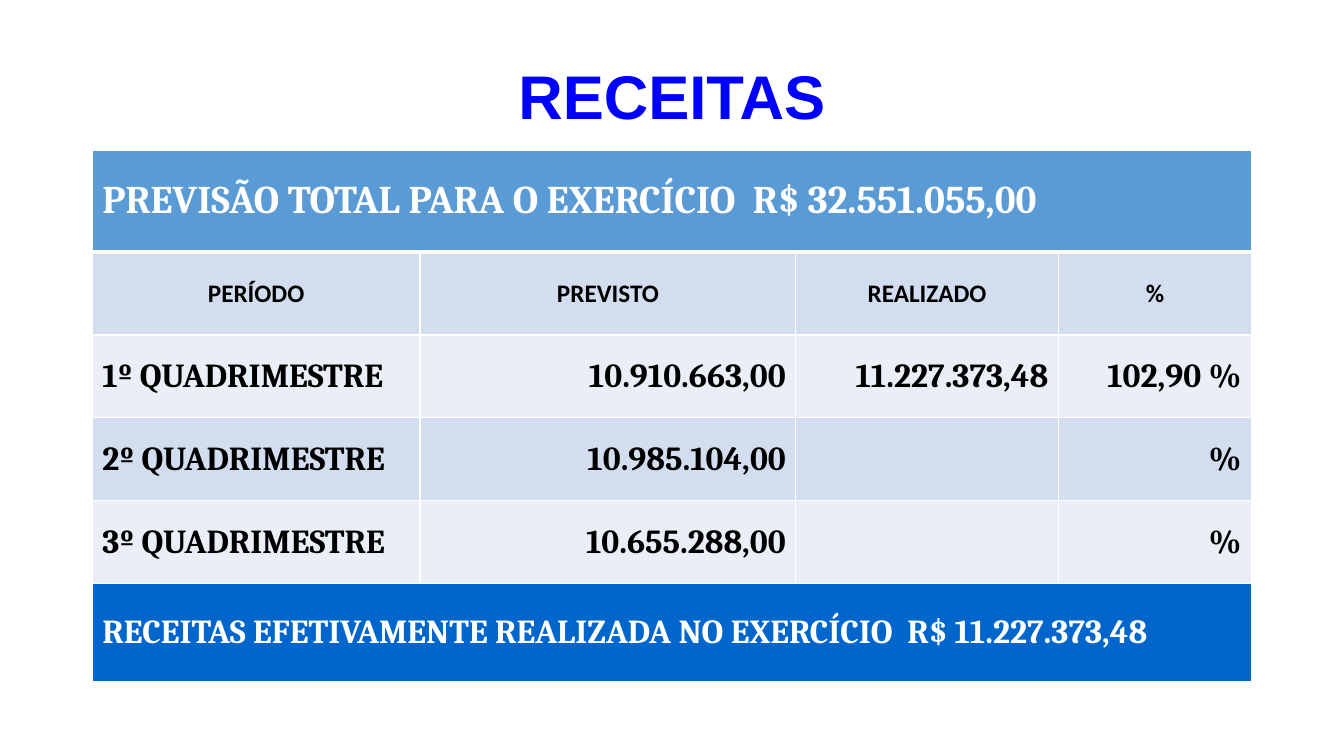
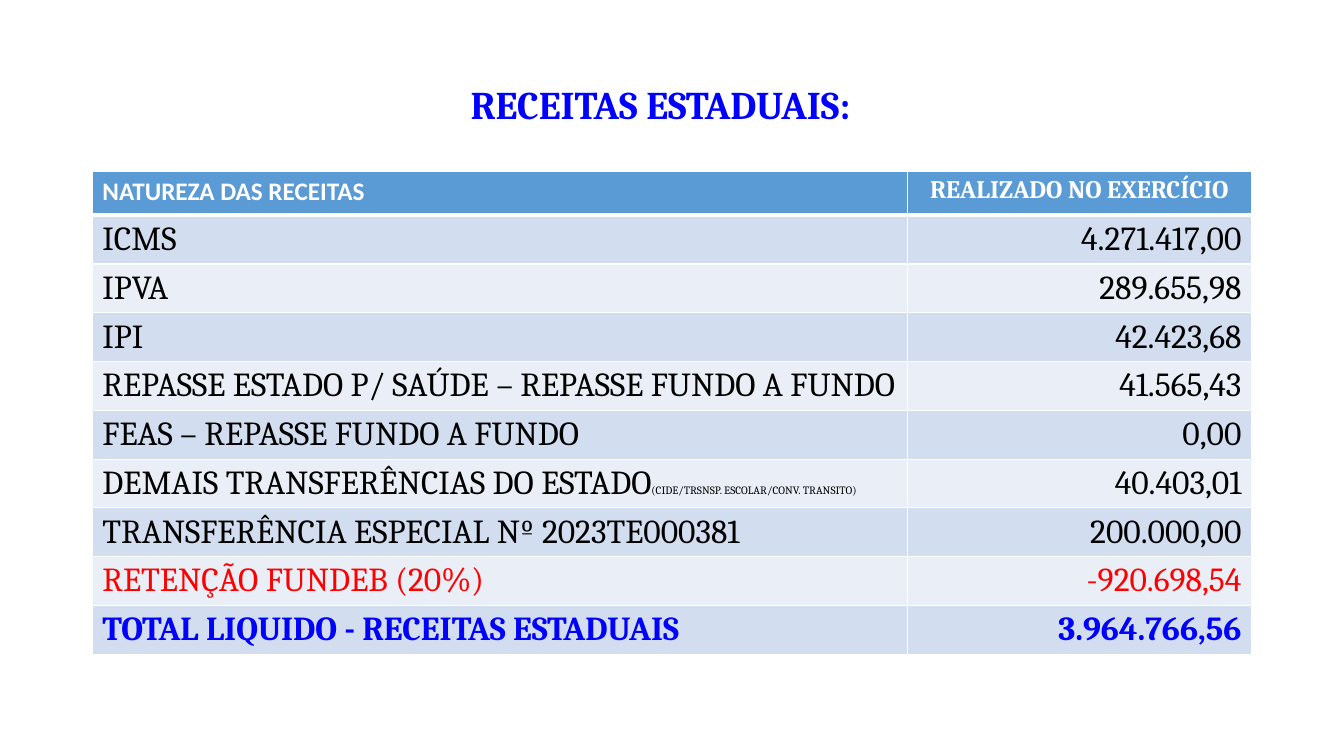
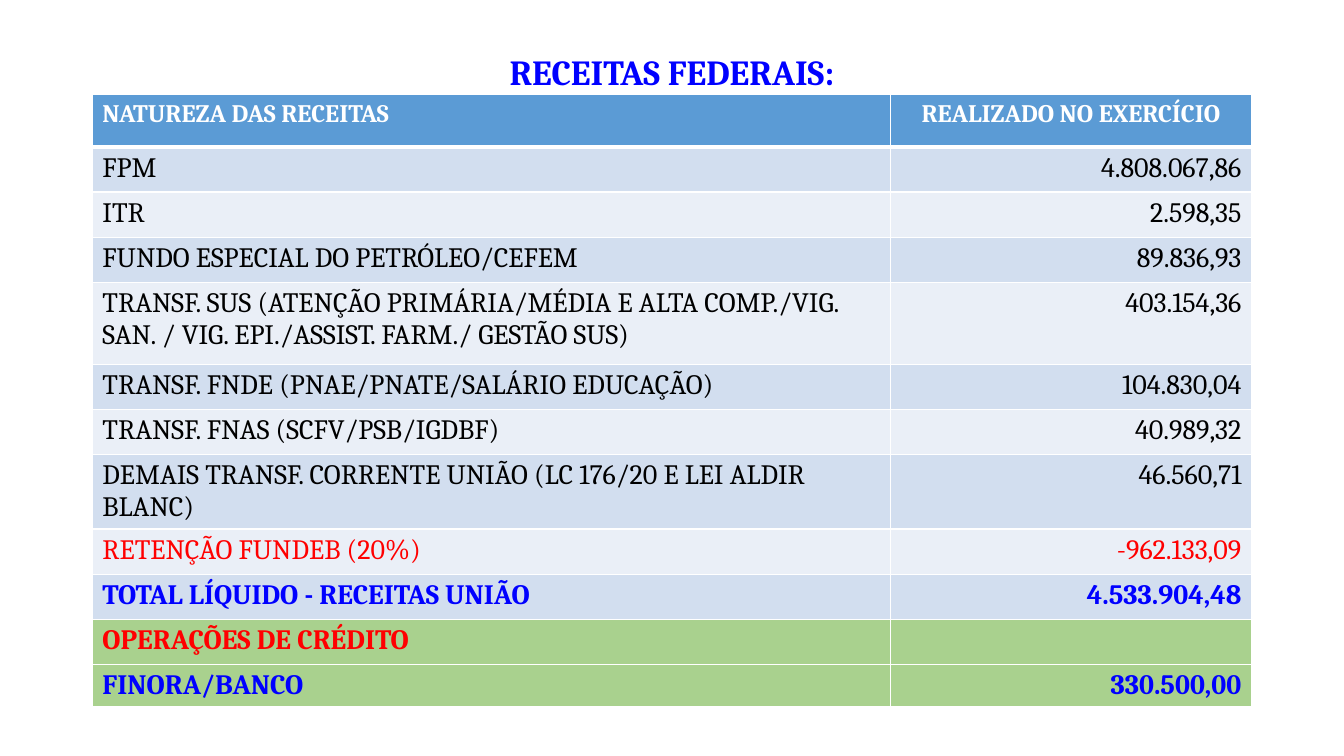
import dataclasses
import lxml.etree
import pptx
import pptx.dml.color
import pptx.enum.text
import pptx.oxml.ns
import pptx.util

RGBColor = pptx.dml.color.RGBColor
PP_ALIGN = pptx.enum.text.PP_ALIGN
MSO_ANCHOR = pptx.enum.text.MSO_ANCHOR

WHITE = RGBColor(0xFF, 0xFF, 0xFF)
BLACK = RGBColor(0x00, 0x00, 0x00)
BLUE = RGBColor(0x00, 0x00, 0xFF)
RED = RGBColor(0xFF, 0x00, 0x00)
HEADER_BLUE = RGBColor(0x5B, 0x9B, 0xD5)
TOTAL_BLUE = RGBColor(0x00, 0x66, 0xCC)
BAND_DARK = RGBColor(0xD2, 0xDE, 0xEF)
BAND_LIGHT = RGBColor(0xEA, 0xEF, 0xF7)
CREDIT_GREEN = RGBColor(0xA9, 0xD1, 0x8E)
BANDS = (BAND_DARK, BAND_LIGHT)

PX = 9525
LEFT, WIDTH = 88, 1104
LEFT_RIGHT = (PP_ALIGN.LEFT, PP_ALIGN.RIGHT)
LEFT_CENTER = (PP_ALIGN.LEFT, PP_ALIGN.CENTER)


@dataclasses.dataclass(frozen=True)
class Style:
    size: float
    color: RGBColor = BLACK
    bold: bool = False
    font: str = "Cambria"


@dataclasses.dataclass(frozen=True)
class Row:
    texts: tuple
    style: Style
    fill: RGBColor
    height: int
    aligns: tuple = LEFT_RIGHT


def format_run(run, style):
    run.font.size = pptx.util.Pt(style.size)
    run.font.color.rgb = style.color
    run.font.bold = style.bold
    run.font.name = style.font


def place_title(slide, text, style, box):
    title = slide.shapes.title
    title.left, title.top, title.width, title.height = (v * PX for v in box)
    frame = title.text_frame
    frame.text = text
    frame.auto_size = pptx.enum.text.MSO_AUTO_SIZE.NONE
    frame.vertical_anchor = MSO_ANCHOR.MIDDLE
    paragraph = frame.paragraphs[0]
    paragraph.alignment = PP_ALIGN.CENTER
    paragraph.line_spacing = 0.9
    format_run(paragraph.runs[0], style)


def set_borders(cell, top, bottom):
    properties = cell._tc.get_or_add_tcPr()
    for side, points in (("lnL", 1), ("lnR", 1), ("lnT", top), ("lnB", bottom)):
        line = lxml.etree.SubElement(
            properties, pptx.oxml.ns.qn(f"a:{side}"), w=str(pptx.util.Pt(points)))
        solid = lxml.etree.SubElement(line, pptx.oxml.ns.qn("a:solidFill"))
        lxml.etree.SubElement(solid, pptx.oxml.ns.qn("a:srgbClr"), val=str(WHITE))


def place_table(slide, top, columns, rows, anchor=MSO_ANCHOR.TOP):
    height = sum(row.height for row in rows)
    table = slide.shapes.add_table(
        len(rows), len(columns), LEFT * PX, top * PX, WIDTH * PX, height * PX).table
    for column, width in zip(table.columns, columns):
        column.width = width * PX
    for r, row in enumerate(rows):
        table.rows[r].height = row.height * PX
        for c in range(len(columns)):
            cell = table.cell(r, c)
            set_borders(cell, 3 if r == 1 else 1, 3 if r == 0 else 1)
            cell.fill.solid()
            cell.fill.fore_color.rgb = row.fill
            cell.vertical_anchor = anchor
        if len(row.texts) == 1:
            table.cell(r, 0).merge(table.cell(r, len(columns) - 1))
        for c, (text, align) in enumerate(zip(row.texts, row.aligns)):
            if text:
                paragraph = table.cell(r, c).text_frame.paragraphs[0]
                paragraph.text = text
                paragraph.alignment = align
                format_run(paragraph.runs[0], row.style)
    return table


def add_slide(deck):
    return deck.slides.add_slide(deck.slide_layouts[5])


def build_overview(deck):
    slide = add_slide(deck)
    place_title(slide, "RECEITAS", Style(44, BLUE, True, "Arial"), (LEFT, 38, WIDTH, 113))
    body = Style(24, BLACK, True)
    quarters = (
        ("1º QUADRIMESTRE", "10.910.663,00", "11.227.373,48", "102,90 %"),
        ("2º QUADRIMESTRE", "10.985.104,00", "", "%"),
        ("3º QUADRIMESTRE", "10.655.288,00", "", "%"),
    )
    rows = [
        Row(("PREVISÃO TOTAL PARA O EXERCÍCIO  R$ 32.551.055,00",),
            Style(28, WHITE, True), HEADER_BLUE, 97),
        Row(("PERÍODO", "PREVISTO", "REALIZADO", "%"),
            Style(18, BLACK, True, "Calibri"), BAND_DARK, 79, (PP_ALIGN.CENTER,) * 4),
    ]
    rows += [
        Row(texts, body, BANDS[(i + 1) % 2], 79, (PP_ALIGN.LEFT,) + (PP_ALIGN.RIGHT,) * 3)
        for i, texts in enumerate(quarters)
    ]
    rows.append(Row(("RECEITAS EFETIVAMENTE REALIZADA NO EXERCÍCIO  R$ 11.227.373,48",),
                    Style(24, WHITE, True), TOTAL_BLUE, 93))
    place_table(slide, 143, (312, 358, 250, 184), rows, MSO_ANCHOR.MIDDLE)


def revenue_rows(entries, size, header_height, heights):
    plain = Style(size)
    styles = [plain] * (len(entries) - 2) + [Style(size, RED), Style(size, BLUE, True)]
    header = Row(("NATUREZA DAS RECEITAS", "REALIZADO NO EXERCÍCIO"),
                 Style(18, WHITE, True), HEADER_BLUE, header_height, LEFT_CENTER)
    return [header] + [
        Row(texts, style, BANDS[i % 2], height)
        for i, (texts, style, height) in enumerate(zip(entries, styles, heights))
    ]


def build_state(deck):
    slide = add_slide(deck)
    place_title(slide, "RECEITAS ESTADUAIS:", Style(28, BLUE, True), (77, 51, WIDTH, 101))
    entries = (
        ("ICMS", "4.271.417,00"),
        ("IPVA", "289.655,98"),
        ("IPI", "42.423,68"),
        ("REPASSE ESTADO P/ SAÚDE – REPASSE FUNDO A FUNDO", "41.565,43"),
        ("FEAS – REPASSE FUNDO A FUNDO", "0,00"),
        ("DEMAIS TRANSFERÊNCIAS DO ESTADO", "40.403,01"),
        ("TRANSFERÊNCIA ESPECIAL Nº 2023TE000381", "200.000,00"),
        ("RETENÇÃO FUNDEB (20%)", "-920.698,54"),
        ("TOTAL LIQUIDO - RECEITAS ESTADUAIS", "3.964.766,56"),
    )
    rows = revenue_rows(entries, 24, 42, [46] * len(entries))
    table = place_table(slide, 163, (776, 328), rows)
    nature = table.cell(0, 0).text_frame.paragraphs[0].runs[0]
    nature.font.name = "Calibri"
    detail = table.cell(6, 0).text_frame.paragraphs[0].add_run()
    detail.text = "(CIDE/TRSNSP. ESCOLAR/CONV. TRANSITO)"
    format_run(detail, Style(8))


def build_federal(deck):
    slide = add_slide(deck)
    place_title(slide, "RECEITAS FEDERAIS:", Style(25.2, BLUE, True), (LEFT, 53, WIDTH, 35))
    entries = (
        ("FPM", "4.808.067,86"),
        ("ITR", "2.598,35"),
        ("FUNDO ESPECIAL DO PETRÓLEO/CEFEM", "89.836,93"),
        ("TRANSF. SUS (ATENÇÃO PRIMÁRIA/MÉDIA E ALTA COMP./VIG. SAN. / VIG. EPI./ASSIST. FARM./ "
         "GESTÃO SUS)", "403.154,36"),
        ("TRANSF. FNDE (PNAE/PNATE/SALÁRIO EDUCAÇÃO)", "104.830,04"),
        ("TRANSF. FNAS (SCFV/PSB/IGDBF)", "40.989,32"),
        ("DEMAIS TRANSF. CORRENTE UNIÃO (LC 176/20 E LEI ALDIR BLANC)", "46.560,71"),
        ("RETENÇÃO FUNDEB (20%)", "-962.133,09"),
        ("TOTAL LÍQUIDO - RECEITAS UNIÃO", "4.533.904,48"),
    )
    rows = revenue_rows(entries, 20, 50, (43, 43, 43, 78, 43, 43, 70, 43, 43))
    rows += [
        Row(("OPERAÇÕES DE CRÉDITO", ""), Style(20, RED, True), CREDIT_GREEN, 43),
        Row(("FINORA/BANCO", "330.500,00"), Style(20, BLUE, True), CREDIT_GREEN, 40),
    ]
    place_table(slide, 90, (760, 344), rows)


def main():
    deck = pptx.Presentation()
    deck.slide_width = 1280 * PX
    deck.slide_height = 720 * PX
    build_overview(deck)
    build_state(deck)
    build_federal(deck)
    deck.save("out.pptx")


if __name__ == "__main__":
    main()
